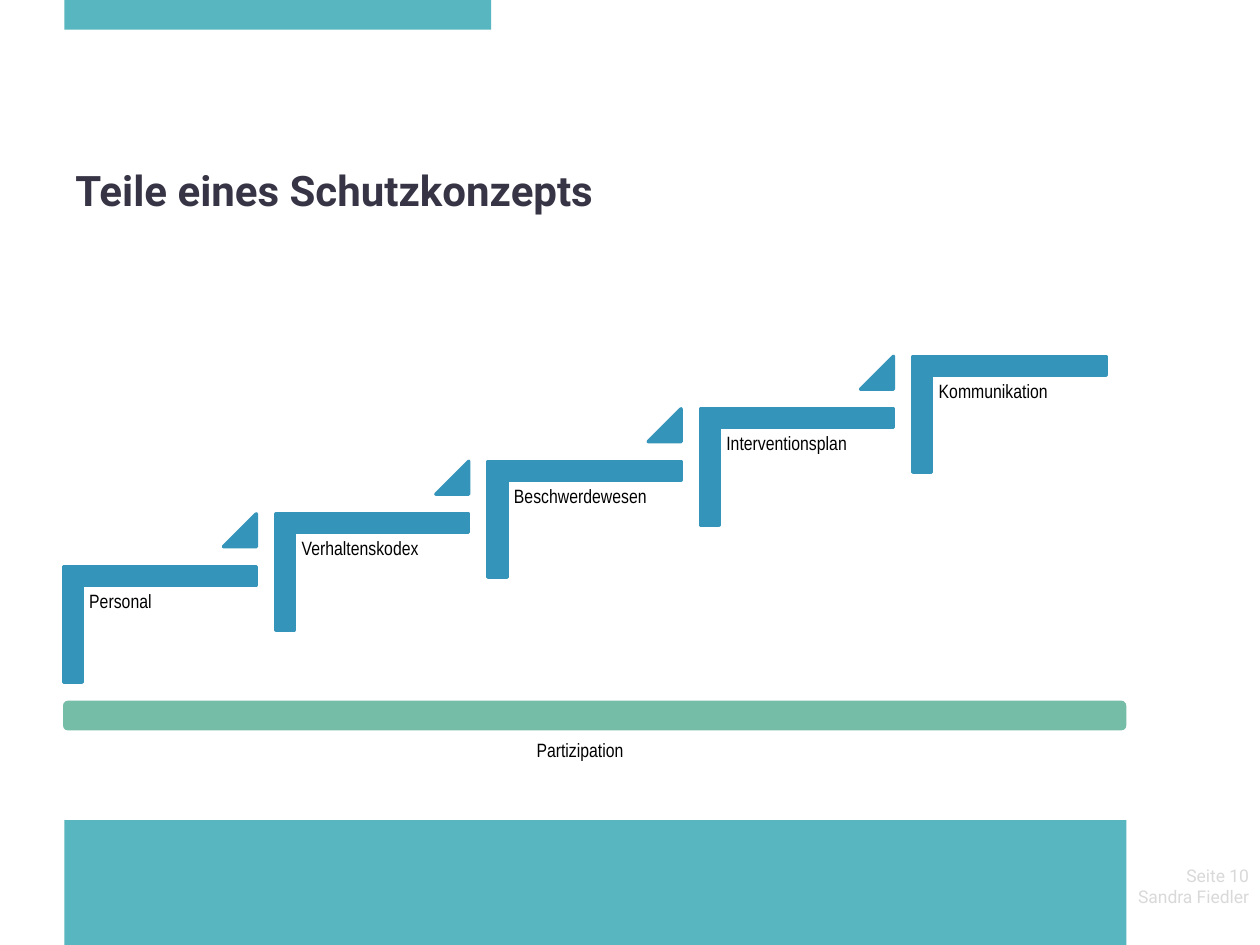
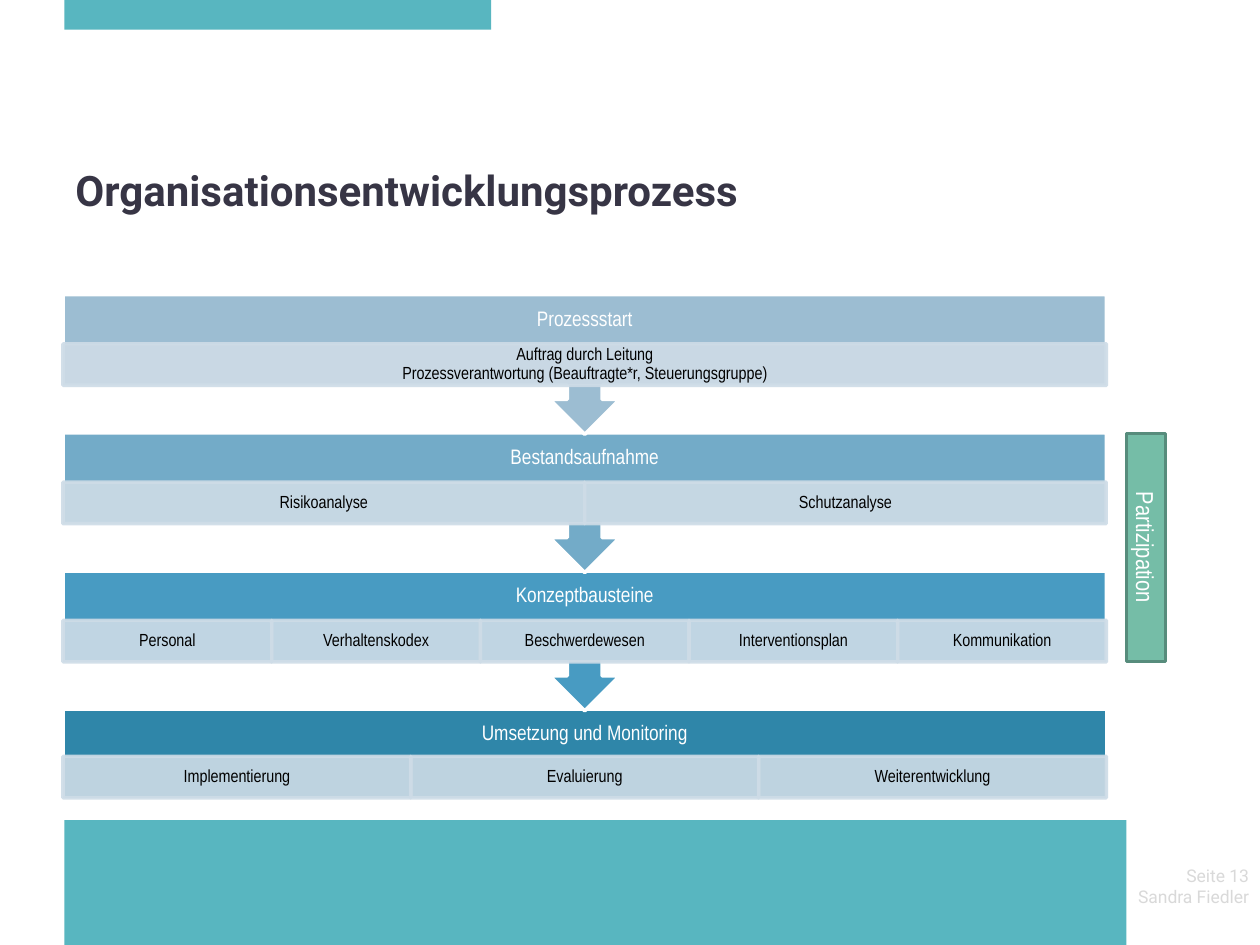
from lxml.etree import SubElement
from pptx import Presentation
from pptx.dml.color import RGBColor
from pptx.enum.shapes import MSO_SHAPE
from pptx.enum.text import MSO_ANCHOR, PP_ALIGN
from pptx.oxml.ns import qn
from pptx.util import Pt

TEAL, BLUE, GREEN, MOSS = "58B6C0", "3494BA", "75BDA7", "578C7C"
MIST, INK, GREY, WHITE, BLACK = "CEDCE7", "373545", "D9D9D9", "FFFFFF", "000000"
HEAD, BODY = "Roboto", "Arial Narrow"
LEFT, WIDE = 36, 596.2
PARTS = ["Personal", "Verhaltenskodex", "Beschwerdewesen",
         "Interventionsplan", "Kommunikation"]
STAGES = [
    ("Prozessstart", "9CBDD2",
     ["Auftrag durch Leitung\nProzessverantwortung (Beauftragte*r, Steuerungsgruppe)"]),
    ("Bestandsaufnahme", "73ABC8", ["Risikoanalyse", "Schutzanalyse"]),
    ("Konzeptbausteine", "489BC2", PARTS),
    ("Umsetzung und Monitoring", "2F86A9",
     ["Implementierung", "Evaluierung", "Weiterentwicklung"]),
]


def tint(target, color, alpha=None):
    """Give a fill or line format a solid colour, with optional opacity in percent."""
    fill = getattr(target, "fill", target)
    fill.solid()
    fill.fore_color.rgb = RGBColor.from_string(color)
    if alpha:
        node = fill._xPr.find(f"{qn('a:solidFill')}/{qn('a:srgbClr')}")
        SubElement(node, qn("a:alpha"), val=str(alpha * 1000))


def write(shape, text, size=11, font=BODY, color=BLACK, bold=False, align=PP_ALIGN.LEFT,
          anchor=MSO_ANCHOR.TOP, pad=(7.2, 3.6), space=0.9):
    """Write text into a shape, one paragraph a line."""
    frame = shape.text_frame
    frame.word_wrap = True
    frame.vertical_anchor = anchor
    frame.margin_left = frame.margin_right = Pt(pad[0])
    frame.margin_top = frame.margin_bottom = Pt(pad[1])
    frame.text = text
    for line in frame.paragraphs:
        line.alignment = align
        line.line_spacing = space
        for run in line.runs:
            run.font.size = Pt(size)
            run.font.name = font
            run.font.bold = bold
            run.font.color.rgb = RGBColor.from_string(color)


class Deck:
    """Hold the shared style and the current slide."""

    def __init__(self):
        """Start an empty deck of 10 by 7.5 inches."""
        self.file = Presentation()
        self.file.slide_width, self.file.slide_height = Pt(720), Pt(540)

    def page(self, title, number):
        """Add a slide with bands, footer and title."""
        self.slide = self.file.slides.add_slide(self.file.slide_layouts[6])
        self.shape(MSO_SHAPE.RECTANGLE, 36.8, 468.6, 606.8, 71.4, TEAL)
        self.shape(MSO_SHAPE.RECTANGLE, 36.8, 0, 243.8, 17, TEAL)
        self.text(f"Seite {number}\nSandra Fiedler", 638, 491, 82.8, 49, size=10,
                  font=HEAD, color=GREY, align=PP_ALIGN.RIGHT, space=1)
        self.text(title, LEFT, 88.6, 648, 39.6, size=24, font=HEAD, color=INK,
                  bold=True, anchor=MSO_ANCHOR.MIDDLE, space=1)

    def shape(self, kind, x, y, w, h, fill, line=None, alpha=None, turn=0, adjust=()):
        """Add a preset shape."""
        item = self.slide.shapes.add_shape(kind, Pt(x), Pt(y), Pt(w), Pt(h))
        item.shadow.inherit = False
        item.rotation = turn
        for i, value in enumerate(adjust):
            item.adjustments[i] = value
        tint(item.fill, fill, alpha)
        if line:
            tint(item.line, line, alpha)
            item.line.width = Pt(2)
        else:
            item.line.fill.background()
        return item

    def text(self, text, x, y, w, h, **form):
        """Add a text box."""
        box = self.slide.shapes.add_textbox(Pt(x), Pt(y), Pt(w), Pt(h))
        write(box, text, **form)

    def step(self, label, x, y):
        """Add one stair with its label."""
        self.shape(MSO_SHAPE.CORNER, x, y, 66.2, 110.2, BLUE, BLUE, turn=90,
                   adjust=(0.16, 0.16))
        self.text(label, x - 10.9, y + 32.8, 99.4, 87, pad=(3.6, 3.6))

    def stage(self, label, fill, cells, y, last):
        """Add one stage with its header, its cells and an arrow unless it is last."""
        if last:
            self.shape(MSO_SHAPE.RECTANGLE, LEFT, y, WIDE, 51.8, fill, WHITE)
        else:
            self.shape(MSO_SHAPE.UP_ARROW_CALLOUT, LEFT, y, WIDE, 79.8, fill, WHITE,
                       turn=180)
        mid = {"align": PP_ALIGN.CENTER, "anchor": MSO_ANCHOR.MIDDLE}
        self.text(label, LEFT, y, WIDE, 28, size=12, color=WHITE, pad=(6.4, 6.4), **mid)
        wide = WIDE / len(cells)
        for i, cell in enumerate(cells):
            box = self.shape(MSO_SHAPE.RECTANGLE, LEFT + i * wide,
                             y + (26.8 if last else 28.1), wide, 23.8,
                             MIST, MIST, alpha=90)
            write(box, cell, size=10, pad=(5.8, 0.7), **mid)


def stairs(deck):
    """Build the slide with the parts of the concept."""
    deck.page("Teile eines Schutzkonzepts", 10)
    for i, part in enumerate(PARTS):
        x, y = 58.3 + i * 121.35, 301.7 - i * 30
        deck.step(part, x, y)
        if i < len(PARTS) - 1:
            deck.shape(MSO_SHAPE.ISOSCELES_TRIANGLE, x + 69.4, y - 8.1, 18.8, 18.8,
                       BLUE, BLUE, adjust=(1,))
    deck.shape(MSO_SHAPE.ROUNDED_RECTANGLE, LEFT, 400.4, 607.6, 17, GREEN)
    deck.text("Partizipation", 303, 419.8, 99.4, 20.9, pad=(3.6, 3.6))


def process(deck):
    """Build the slide with the stages of the process."""
    deck.page("Organisationsentwicklungsprozess", 13)
    final = len(STAGES) - 1
    for i in range(final, -1, -1):
        deck.stage(*STAGES[i], 168.4 + i * 79, i == final)
    side = deck.shape(MSO_SHAPE.RECTANGLE, 643.6, 247.6, 22.4, 130.4, GREEN, MOSS)
    write(side, "Partizipation", size=14, color=WHITE, align=PP_ALIGN.CENTER,
          anchor=MSO_ANCHOR.MIDDLE, space=1)
    side.text_frame._txBody.find(qn("a:bodyPr")).set("vert", "vert")


def main():
    """Build and save the deck."""
    deck = Deck()
    stairs(deck)
    process(deck)
    deck.file.save("out.pptx")


if __name__ == "__main__":
    main()
